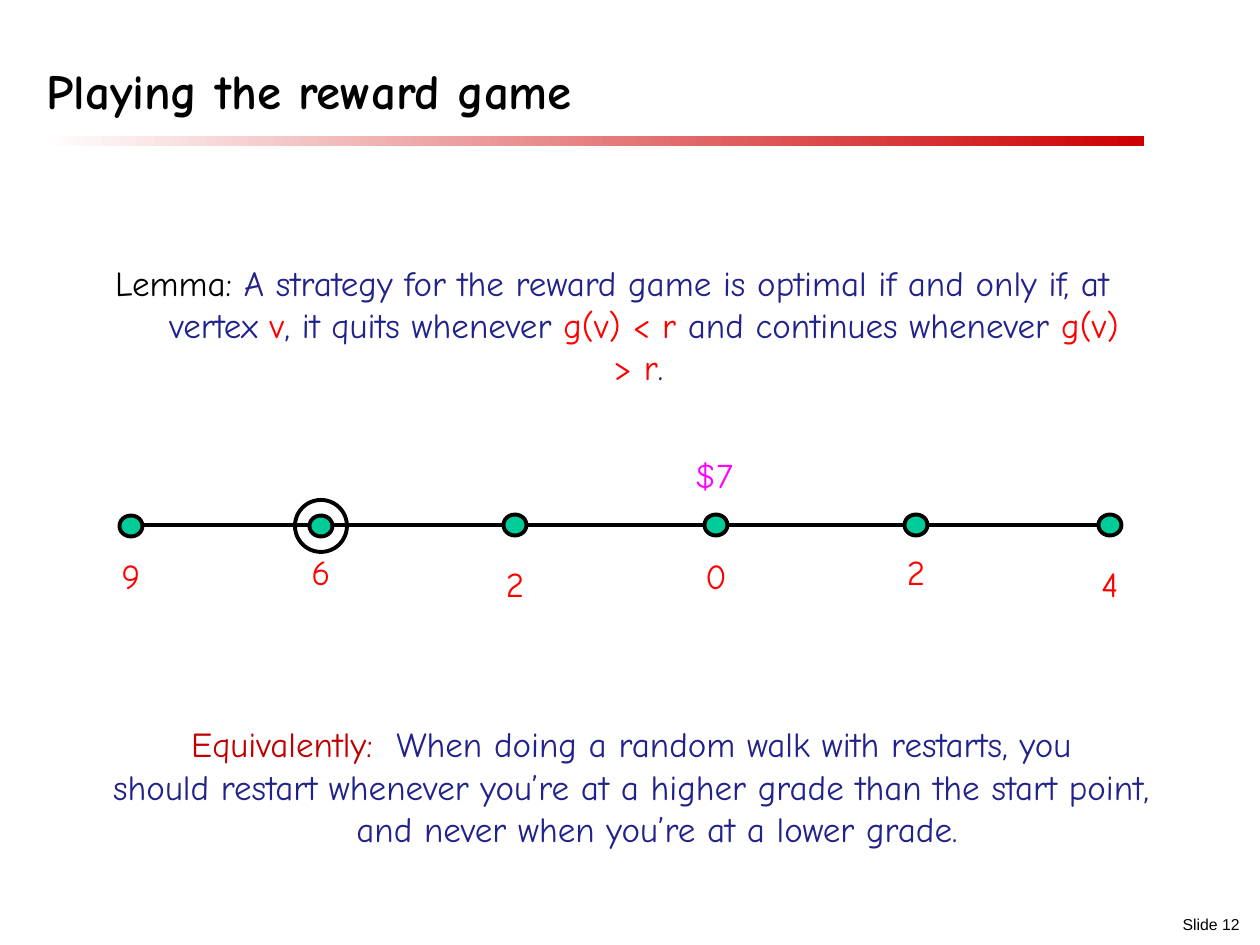
import pptx
import pptx.dml.color
import pptx.enum.shapes
import pptx.enum.text
import pptx.oxml
import pptx.util

EMU_PER_PX = 914400 / 126
COLORS = {
    "black": "000000", "white": "FFFFFF", "navy": "22228B", "red": "FF0000",
    "dark_red": "C00000", "bar_red": "CC0000", "magenta": "FF00FF", "green": "00CC99",
}
FONT = "Comic Neue"
ALIGN = pptx.enum.text.PP_ALIGN
ANCHOR = pptx.enum.text.MSO_ANCHOR
SHAPES = pptx.enum.shapes.MSO_SHAPE
HANGING_PX = 63
LINE_Y = 525
VERTICES = [
    (131, 526, "9", 548),
    (321, 526, "6", 544),
    (515, 525, "2", 556),
    (716, 525, "0", 548),
    (916, 525, "2", 544),
    (1110, 525, "4", 556),
]
LEMMA = [[
    ("Lemma: ", "black"),
    ("A strategy for the reward game is optimal if and only if, at vertex ", "navy"),
    ("v", "red"),
    (", it quits whenever ", "navy"),
    ("g(v) < r ", "red"),
    ("and continues whenever ", "navy"),
    ("g(v) > r", "red"),
    (". ", "navy"),
]]
EQUIVALENT = [
    [("Equivalently:  ", "dark_red"),
     ("When doing a random walk with restarts, you", "navy")],
    [("should restart whenever you’re at a higher grade than the start point, "
      "and never when you’re at a lower grade. ", "navy")],
]


def px(length):
    return pptx.util.Emu(round(length * EMU_PER_PX))


def rgb(name):
    return pptx.dml.color.RGBColor.from_string(COLORS[name])


def add_run(paragraph, text, color, size=20, font=FONT, bold=False):
    run = paragraph.add_run()
    run.text = text
    run.font.name = font
    run.font.size = pptx.util.Pt(size)
    run.font.bold = bold
    run.font.color.rgb = rgb(color)


def add_text_box(slide, left, top, width, height):
    shape = slide.shapes.add_textbox(px(left), px(top), px(width), px(height))
    frame = shape.text_frame
    frame.word_wrap = True
    frame.auto_size = pptx.enum.text.MSO_AUTO_SIZE.SHAPE_TO_FIT_TEXT
    frame.vertical_anchor = ANCHOR.MIDDLE
    return frame


def add_statement(slide, left, top, width, height, lines):
    frame = add_text_box(slide, left, top, width, height)
    for index, line in enumerate(lines):
        paragraph = frame.add_paragraph() if index else frame.paragraphs[0]
        paragraph.alignment = ALIGN.CENTER
        properties = paragraph._p.get_or_add_pPr()
        properties.set("marL", str(px(HANGING_PX)))
        properties.set("indent", str(-px(HANGING_PX)))
        for text, color in line:
            add_run(paragraph, text, color)


def add_label(slide, center_x, top, width, text, color):
    frame = add_text_box(slide, center_x - width / 2, top, width, 55)
    paragraph = frame.paragraphs[0]
    paragraph.alignment = ALIGN.CENTER
    add_run(paragraph, text, color)


def add_ellipse(slide, center_x, center_y, width, height, fill=None):
    shape = slide.shapes.add_shape(
        SHAPES.OVAL, px(center_x - width / 2), px(center_y - height / 2),
        px(width), px(height))
    shape.shadow.inherit = False
    if fill:
        shape.fill.solid()
        shape.fill.fore_color.rgb = rgb(fill)
    else:
        shape.fill.background()
    shape.line.color.rgb = rgb("black")
    shape.line.width = pptx.util.Pt(2.25)


def add_path_line(slide, start_x, end_x, y):
    connector = slide.shapes.add_connector(
        pptx.enum.shapes.MSO_CONNECTOR.STRAIGHT, px(start_x), px(y), px(end_x), px(y))
    connector.line.color.rgb = rgb("black")
    connector.line.width = pptx.util.Pt(2.25)
    connector._element.spPr.append(pptx.oxml.parse_xml(
        '<a:effectLst xmlns:a="http://schemas.openxmlformats.org/drawingml/2006/main"/>'))


def add_title_bar(slide):
    bar = slide.shapes.add_shape(
        SHAPES.ROUNDED_RECTANGLE, px(42), px(136), px(1102), px(10))
    bar.adjustments[0] = 0.02
    bar.shadow.inherit = False
    bar.line.fill.background()
    bar.fill.gradient()
    bar.fill.gradient_angle = 180
    for stop, color in zip(bar.fill.gradient_stops, ("bar_red", "white")):
        stop.color.rgb = rgb(color)


def set_title(slide, text):
    title = slide.shapes.title
    title.left, title.top, title.width, title.height = px(34), px(34), px(1173), px(92)
    frame = title.text_frame
    frame.vertical_anchor = ANCHOR.BOTTOM
    frame.auto_size = pptx.enum.text.MSO_AUTO_SIZE.NONE
    paragraph = frame.paragraphs[0]
    paragraph.alignment = ALIGN.LEFT
    paragraph.line_spacing = 0.85
    add_run(paragraph, text, "black", size=28, bold=True)


def add_slide_number(slide, text):
    paragraph = add_text_box(slide, 990, 910, 262, 30).paragraphs[0]
    paragraph.alignment = ALIGN.RIGHT
    paragraph.line_spacing = 0.93
    add_run(paragraph, text, "black", size=9, font="Arial")


def add_reward_path(slide):
    add_path_line(slide, VERTICES[0][0], VERTICES[-1][0], LINE_Y)
    for center_x, center_y, grade, label_top in VERTICES:
        add_ellipse(slide, center_x, center_y, 23, 21, "green")
        add_label(slide, center_x, label_top, 53, grade, "red")
    start_x, start_y = VERTICES[1][:2]
    add_ellipse(slide, start_x, start_y, 52, 52)
    add_label(slide, 714, 447, 82, "$7", "magenta")


def main():
    presentation = pptx.Presentation()
    presentation.slide_width = px(1260)
    presentation.slide_height = px(945)
    slide = presentation.slides.add_slide(presentation.slide_layouts[5])
    add_slide_number(slide, "Slide 12")
    add_title_bar(slide)
    set_title(slide, "Playing the reward game")
    add_statement(slide, 100, 716, 1063, 140, EQUIVALENT)
    add_statement(slide, 79, 255, 1067, 140, LEMMA)
    add_reward_path(slide)
    presentation.save("out.pptx")


if __name__ == "__main__":
    main()
